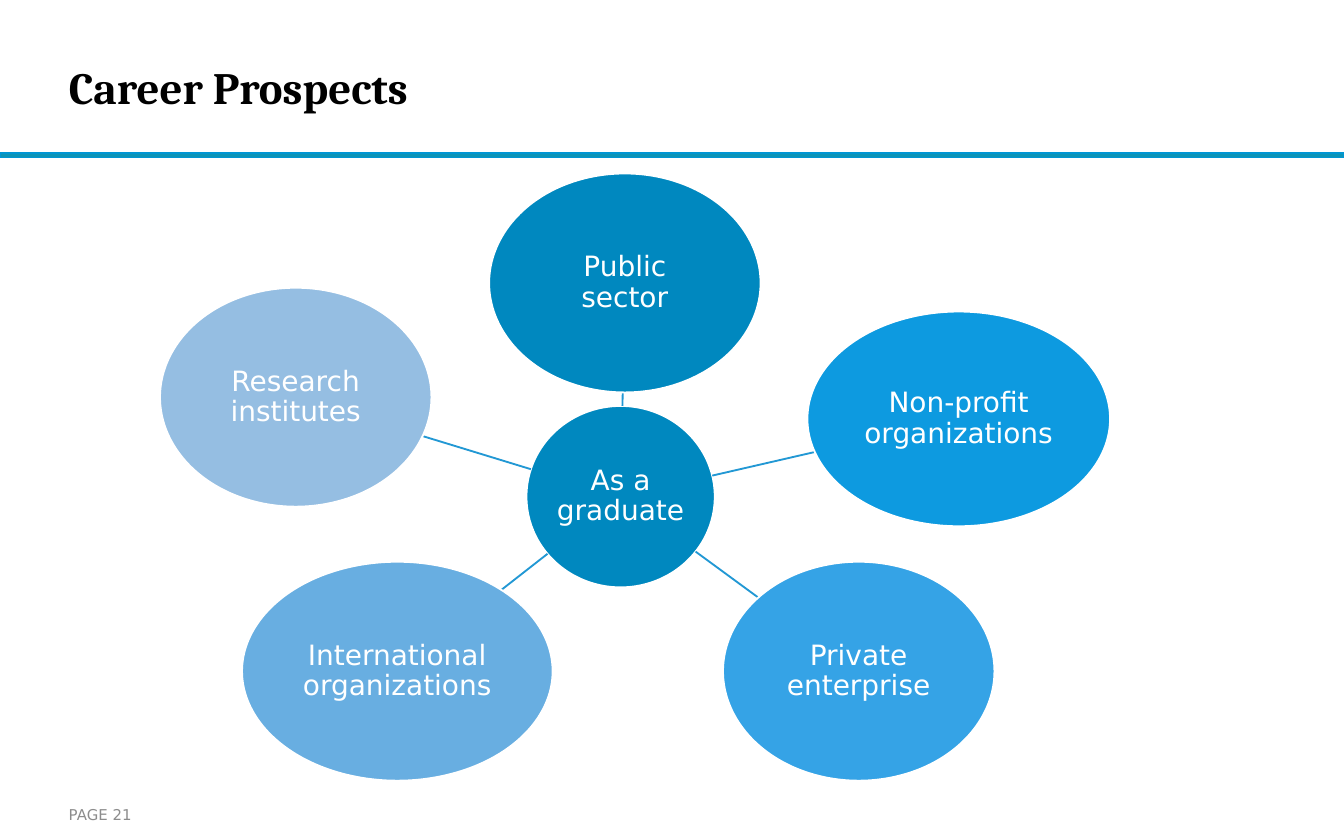
"""Build the career prospects slide: a hub with five spokes."""
from math import hypot

from lxml import etree
from pptx import Presentation
from pptx.dml.color import RGBColor
from pptx.enum.shapes import MSO_CONNECTOR, MSO_SHAPE
from pptx.enum.text import MSO_ANCHOR, MSO_AUTO_SIZE, PP_ALIGN
from pptx.oxml.ns import qn
from pptx.util import Cm, Pt

TITLE_ONLY = 5
RECT, OVAL = MSO_SHAPE.RECTANGLE, MSO_SHAPE.OVAL
STRAIGHT = MSO_CONNECTOR.STRAIGHT
LEFT, CENTER = PP_ALIGN.LEFT, PP_ALIGN.CENTER
MIDDLE = MSO_ANCHOR.MIDDLE
NO_FIT = MSO_AUTO_SIZE.NONE

HUB = ("As a\vgraduate", 11.73, 9.39, 3.56, 3.43, "0088BF")
SECTORS = [
    ("Public\vsector", 11.81, 5.35, 5.13, 4.14, "0088BF"),
    ("Non-profit\vorganizations", 18.12, 7.92, 5.72, 4.06, "0D9AE0"),
    ("Private\venterprise", 16.23, 12.69, 5.13, 4.14, "35A3E6"),
    ("International\vorganizations", 7.51, 12.69, 5.87, 4.14, "68AEE1"),
    ("Research\vinstitutes", 5.59, 7.51, 5.13, 4.14, "95BEE2"),
]


def rgb(value):
    """Turn a hex string into a colour."""
    return RGBColor.from_string(value)


def put_text(tf, text, size=15, color="FFFFFF", font="DejaVu Sans",
             bold=False, align=LEFT, spacing=None):
    """Write one formatted paragraph, centred vertically, without insets."""
    tf.word_wrap = True
    tf.auto_size = NO_FIT
    tf.vertical_anchor = MIDDLE
    tf.margin_left = tf.margin_right = tf.margin_top = tf.margin_bottom = 0
    p = tf.paragraphs[0]
    p.text = text
    p.alignment = align
    p.line_spacing = spacing
    for r in p.runs:
        r.font.name, r.font.size, r.font.bold = font, Pt(size), bold
        r.font.color.rgb = rgb(color)


def edge_point(node, other):
    """Return the point on a node's outline that faces another node."""
    _, x, y, w, h, _ = node
    dx, dy = other[1] - x, other[2] - y
    scale = 1 / hypot(dx / (w / 2), dy / (h / 2))
    return x + dx * scale, y + dy * scale


class Deck:
    """Hold the slide and its line style, and draw each kind of element."""

    def __init__(self, s, line_width=1, spoke_color="2298D4"):
        """Keep the slide and the style."""
        self.s = s
        self.line_width = Pt(line_width)
        self.spoke_color = spoke_color

    def title(self, text, x, y, w, h):
        """Place and fill the title placeholder."""
        sp = self.s.shapes.title
        sp.left, sp.top, sp.width, sp.height = Cm(x), Cm(y), Cm(w), Cm(h)
        put_text(sp.text_frame, text, size=24, color="000000",
                 font="Cambria", bold=True)

    def label(self, text, x, y, w, h):
        """Add a small grey text box."""
        sp = self.s.shapes.add_textbox(Cm(x), Cm(y), Cm(w), Cm(h))
        put_text(sp.text_frame, text, size=8, color="8C8C8C")

    def shape(self, kind, x, y, w, h, fill, line):
        """Add a filled and outlined preset shape."""
        sp = self.s.shapes.add_shape(kind, Cm(x), Cm(y), Cm(w), Cm(h))
        sp.shadow.inherit = False
        sp.fill.solid()
        sp.fill.fore_color.rgb = rgb(fill)
        sp.line.color.rgb = rgb(line)
        sp.line.width = self.line_width
        return sp

    def node(self, text, x, y, w, h, fill):
        """Add a labelled ellipse around a centre."""
        sp = self.shape(OVAL, x - w / 2, y - h / 2, w, h, fill, "FFFFFF")
        put_text(sp.text_frame, text, align=CENTER, spacing=0.9)

    def spoke(self, start, end):
        """Join the facing edges of two nodes."""
        points = edge_point(start, end) + edge_point(end, start)
        sp = self.s.shapes.add_connector(STRAIGHT, *map(Cm, points))
        sp.line.color.rgb = rgb(self.spoke_color)
        sp.line.width = self.line_width
        etree.SubElement(sp._element.spPr, qn("a:effectLst"))


def main():
    """Build and save the slide."""
    prs = Presentation()
    prs.slide_width, prs.slide_height = Cm(25.4), Cm(15.88)
    deck = Deck(prs.slides.add_slide(prs.slide_layouts[TITLE_ONLY]))
    deck.shape(RECT, 0, 2.9, 25.4, 0.08, "0C94B7", "0096D3")
    deck.label("PAGE 21", 1.3, 15.04, 2.49, 0.71)
    deck.title("Career Prospects", 1.3, 0.38, 19, 2.51)
    deck.node(*HUB)
    for sector in SECTORS:
        deck.spoke(HUB, sector)
        deck.node(*sector)
    prs.save("out.pptx")


if __name__ == "__main__":
    main()
